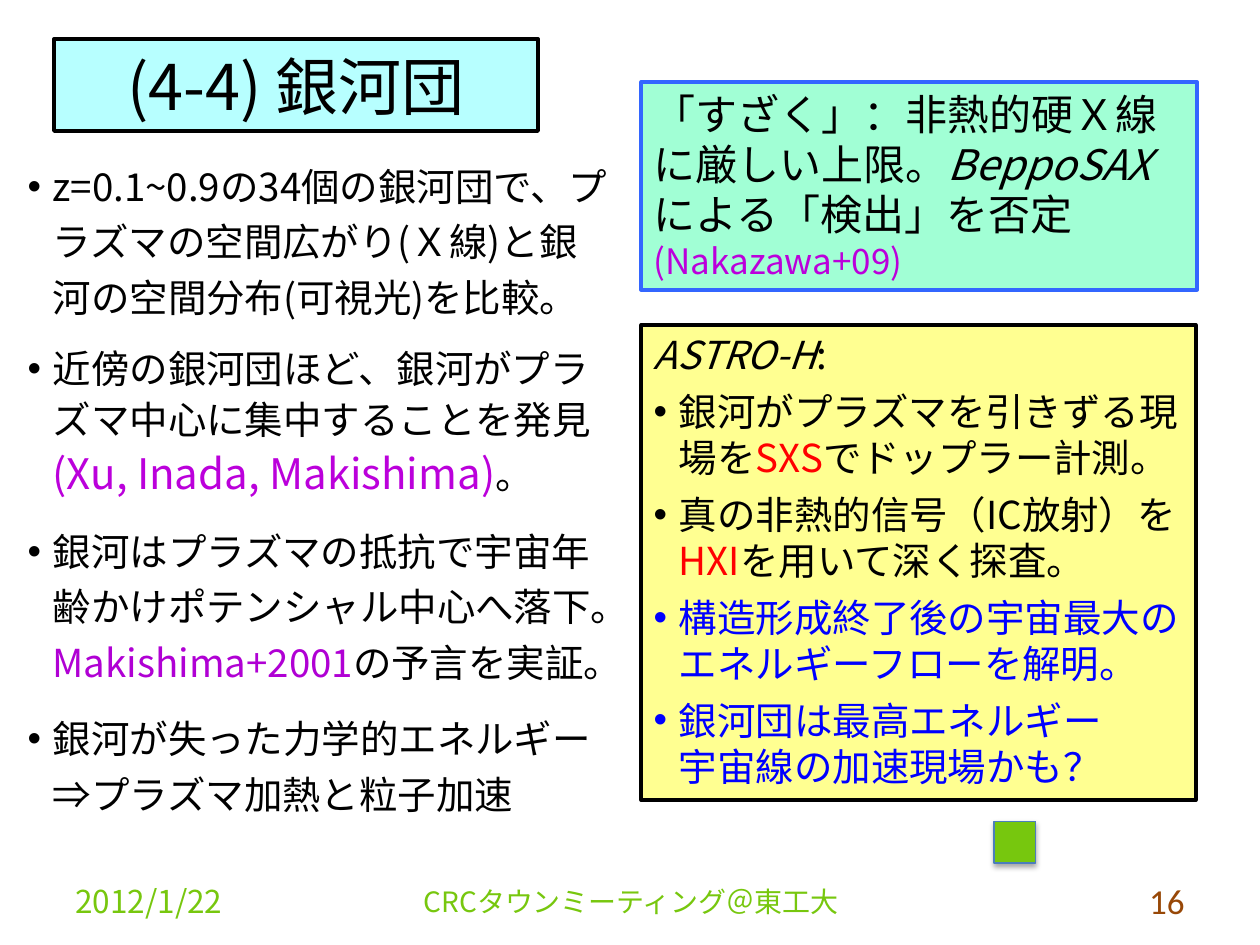
from lxml import etree
from pptx import Presentation
from pptx.dml.color import RGBColor
from pptx.enum.shapes import MSO_SHAPE
from pptx.enum.text import MSO_ANCHOR, MSO_AUTO_SIZE, PP_ALIGN
from pptx.oxml.ns import qn
from pptx.util import Inches, Pt

RECTANGLE, BUTTON = MSO_SHAPE.RECTANGLE, MSO_SHAPE.ACTION_BUTTON_CUSTOM
LEFT, CENTER, RIGHT = PP_ALIGN.LEFT, PP_ALIGN.CENTER, PP_ALIGN.RIGHT
TOP, MIDDLE = MSO_ANCHOR.TOP, MSO_ANCHOR.MIDDLE
GROW = MSO_AUTO_SIZE.SHAPE_TO_FIT_TEXT
GOTHIC = "Noto Sans CJK JP"
BLACK, RED, BLUE, GREEN = "000000", "FF0000", "0000FF", "77C70E"
PURPLE, VIOLET = "BB00DB", "B000D4"


def rgb(color):
    return RGBColor.from_string(color)


def write(frame, paragraphs, size, color=BLACK, align=LEFT, anchor=TOP,
          font=GOTHIC, before=0):
    """Fill a frame; a paragraph is (bulleted, line spacing, runs),
    a run is (text, overrides of size, color and italic)."""
    frame.word_wrap = True
    frame.vertical_anchor = anchor
    for number, (bulleted, spacing, runs) in enumerate(paragraphs):
        paragraph = frame.add_paragraph() if number else frame.paragraphs[0]
        paragraph.alignment = align
        paragraph.line_spacing = spacing
        if bulleted:
            paragraph.space_before = Pt(before)
            properties = paragraph._p.get_or_add_pPr()
            properties.set("marL", str(Inches(0.2)))
            properties.set("indent", str(Inches(-0.2)))
            etree.SubElement(properties, qn("a:buFont"), typeface="Arial")
            etree.SubElement(properties, qn("a:buChar"), char="•")
        for text, style in runs:
            for line_number, line in enumerate(text.split("\n")):
                if line_number:
                    paragraph.add_line_break()
                run = paragraph.add_run()
                run.text = line
                run.font.name = font
                run.font.size = Pt(style.get("size", size))
                run.font.italic = style.get("italic", False)
                run.font.color.rgb = rgb(style.get("color", color))
                etree.SubElement(run.font._element, qn("a:ea"), typeface=font)


prs = Presentation()
prs.slide_width, prs.slide_height = Inches(10), Inches(7.5)
slide = prs.slides.add_slide(prs.slide_layouts[6])

# Footer
for left, width, text, size, color, align, font in [
    (0.5, 2.33, "2012/1/22", 18, GREEN, LEFT, GOTHIC),
    (7.17, 2.33, "16", 20, "984807", RIGHT, "Calibri"),
    (3.08, 3.86, "CRCタウンミーティング＠東工大", 16, GREEN, CENTER, GOTHIC),
]:
    footer = slide.shapes.add_textbox(
        Inches(left), Inches(6.95), Inches(width), Inches(0.4))
    write(footer.text_frame, [(False, 1, [(text, {})])], size, color, align,
          MIDDLE, font)

# Findings on the left
findings = slide.shapes.add_textbox(
    Inches(0.12), Inches(1.17), Inches(4.81), Inches(5.41))
write(findings.text_frame, [
    (True, 1.2, [("z=0.1~0.9の34個の銀河団で、プラズマの空間広がり(Ｘ線)"
                  "と銀河の空間分布(可視光)を比較。", {})]),
    (True, 1.1, [("近傍の銀河団ほど、銀河がプラズマ中心に集中することを発見 ", {}),
                 ("(Xu, Inada, Makishima)", {"size": 24, "color": PURPLE}),
                 ("。", {})]),
    (True, 1.2, [("銀河はプラズマの抵抗で宇宙年齢かけポテンシャル中心へ落下。", {}),
                 ("Makishima+2001", {"color": VIOLET}),
                 ("の予言を実証。", {})]),
    (True, 1.2, [("銀河が失った力学的エネルギー⇒プラズマ加熱と粒子加速", {})]),
], 22, before=12)
findings.text_frame.auto_size = GROW

# Title and the two framed panels
title_text = [(False, 1, [("(4-4) 銀河団", {})])]
suzaku_text = [(False, 1, [
    ("「すざく」：非熱的硬Ｘ線に厳しい上限。", {}),
    ("BeppoSAX ", {"italic": True}),
    ("による「検出」を否定 ", {}),
    ("(Nakazawa+09)", {"size": 20, "color": PURPLE}),
])]
astro_h_text = [
    (False, 1, [("ASTRO-H", {"italic": True}), (":", {})]),
    (True, 1, [("銀河がプラズマを引きずる現場を", {}),
               ("SXS", {"color": RED}), ("でドップラー計測。", {})]),
    (True, 1, [("真の非熱的信号（IC放射）を", {}),
               ("HXI", {"color": RED}), ("を用いて深く探査。", {})]),
    (True, 1, [("構造形成終了後の宇宙最大のエネルギーフローを解明。",
                {"color": BLUE})]),
    (True, 1, [("銀河団は最高エネルギー\n宇宙線の加速現場かも？",
                {"color": BLUE})]),
]
for box, fill, opacity, outline, text, size, align, anchor in [
    ((0.43, 0.31, 3.84, 0.73), "B7FFFF", 100, BLACK, title_text, 36, CENTER, MIDDLE),
    ((5.09, 0.65, 4.41, 1.65), "A1FFD5", 100, "3366FF", suzaku_text, 24, LEFT, TOP),
    ((5.09, 2.58, 4.4, 3.77), "FFFF00", 43, BLACK, astro_h_text, 22, LEFT, TOP),
]:
    panel = slide.shapes.add_shape(RECTANGLE, *map(Inches, box))
    panel.shadow.inherit = False
    panel.fill.solid()
    panel.fill.fore_color.rgb = rgb(fill)
    if opacity < 100:
        fill_color = panel._element.spPr.find(qn("a:solidFill"))[0]
        etree.SubElement(fill_color, qn("a:alpha"), val=str(opacity * 1000))
    panel.line.color.rgb = rgb(outline)
    panel.line.width = Pt(2.25)
    write(panel.text_frame, text, size, align=align, anchor=anchor, before=6)
    if anchor == TOP:
        panel.text_frame.auto_size = GROW

# Button with a soft shadow below it
button = slide.shapes.add_shape(
    BUTTON, Inches(7.89), Inches(6.52), Inches(0.33), Inches(0.33))
button.fill.solid()
button.fill.fore_color.rgb = rgb(GREEN)
button.line.color.rgb = rgb("4B7EBC")
button.line.width = Pt(0.75)
button.shadow.inherit = False
effects = button._element.spPr.find(qn("a:effectLst"))
shadow = etree.SubElement(
    effects, qn("a:outerShdw"), blurRad=str(Pt(3.1)), dist=str(Pt(1.8)),
    dir=str(90 * 60000), rotWithShape="0")
shadow_color = etree.SubElement(shadow, qn("a:srgbClr"), val=BLACK)
etree.SubElement(shadow_color, qn("a:alpha"), val="35000")

prs.save("out.pptx")
